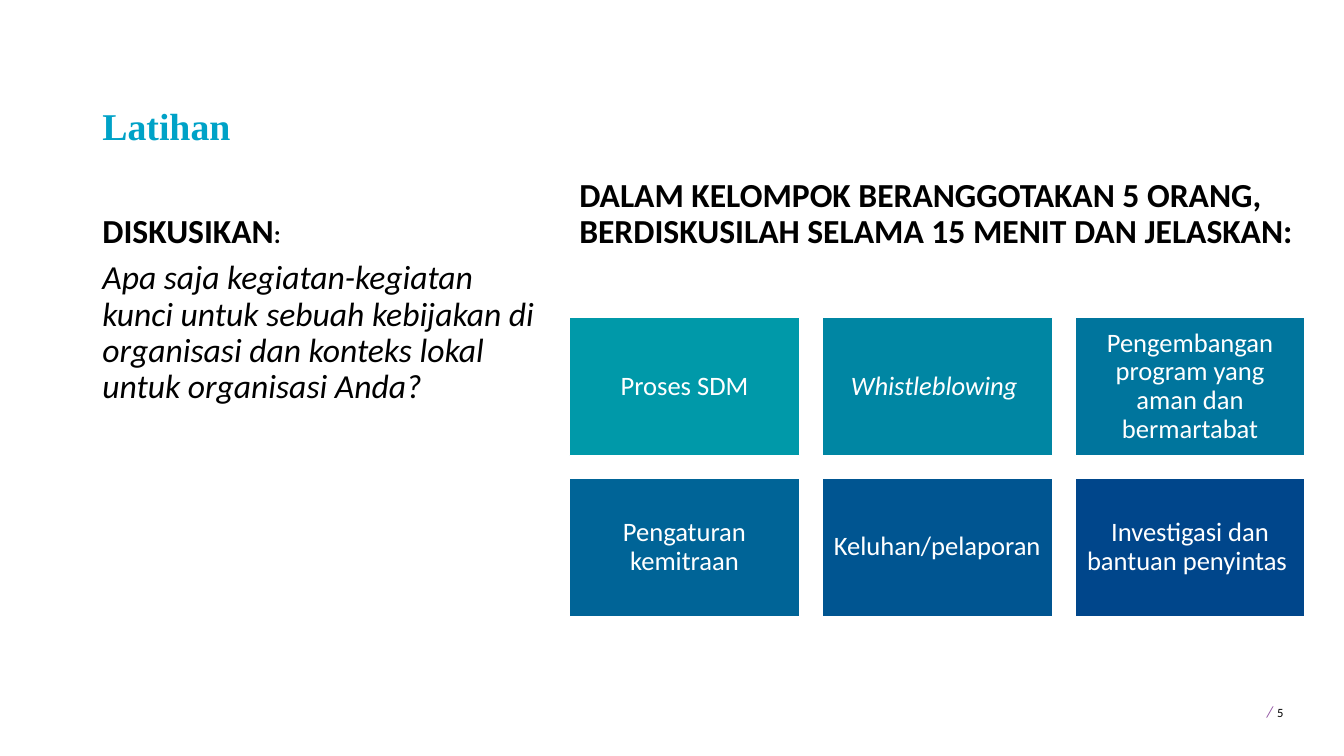
from pptx import Presentation
from pptx.dml.color import RGBColor
from pptx.enum import shapes, text
from pptx.util import Cm, Pt

BLACK = RGBColor(0x00, 0x00, 0x00)
WHITE = RGBColor(0xFF, 0xFF, 0xFF)
CYAN = RGBColor(0x00, 0xA2, 0xC7)
PURPLE = RGBColor(0x90, 0x53, 0xA1)
TILES = [
    ("Proses SDM", RGBColor(0x00, 0x99, 0xA9)),
    ("Whistleblowing ", RGBColor(0x00, 0x86, 0xA3)),
    ("Pengembangan program yang aman dan bermartabat", RGBColor(0x00, 0x75, 0x9D)),
    ("Pengaturan kemitraan", RGBColor(0x00, 0x64, 0x97)),
    ("Keluhan/pelaporan", RGBColor(0x00, 0x55, 0x91)),
    ("Investigasi dan bantuan penyintas\u00a0", RGBColor(0x00, 0x46, 0x8B)),
]

deck = Presentation()
deck.slide_width, deck.slide_height = Cm(33.87), Cm(19.05)
slide = deck.slides.add_slide(deck.slide_layouts[6])


def write(para, words, size=24, color=BLACK, face="Calibri", bold=False, slant=False):
    run = para.add_run()
    run.text = words
    font = run.font
    font.name, font.size, font.bold, font.italic = face, Pt(size), bold, slant
    font.color.rgb = color


def add_box(left, top, width, height, anchor=text.MSO_ANCHOR.BOTTOM, lead=0.9):
    box = slide.shapes.add_textbox(Cm(left), Cm(top), Cm(width), Cm(height))
    frame = box.text_frame
    frame.word_wrap = True
    frame.vertical_anchor = anchor
    para = frame.paragraphs[0]
    para.line_spacing = lead
    return para


title = add_box(2.33, 1.01, 29.21, 2.87)
write(title, "Latihan", size=27, color=CYAN, face="Times New Roman", bold=True)

head = add_box(2.33, 4.15, 11.07, 2.29)
write(head, "DISKUSIKAN", bold=True)
write(head, ":", size=18, bold=True)

body = add_box(2.33, 6.45, 11.4, 10.85, anchor=text.MSO_ANCHOR.TOP)
write(body, "Apa saja kegiatan-kegiatan kunci untuk sebuah kebijakan di "
      "organisasi dan konteks lokal untuk organisasi Anda?", slant=True)

task = add_box(14.35, 4.15, 18.55, 2.29)
write(task, "DALAM KELOMPOK BERANGGOTAKAN 5 ORANG, "
      "BERDISKUSILAH SELAMA 15 MENIT DAN JELASKAN:", bold=True)

for i, (label, fill) in enumerate(TILES):
    row, col = divmod(i, 3)
    tile = slide.shapes.add_shape(
        shapes.MSO_SHAPE.RECTANGLE,
        Cm(14.35 + 6.37 * col), Cm(8 + 4.05 * row), Cm(5.8), Cm(3.48))
    tile.shadow.inherit = False
    tile.fill.solid()
    tile.fill.fore_color.rgb = fill
    tile.line.color.rgb = WHITE
    tile.line.width = Pt(1)
    frame = tile.text_frame
    frame.word_wrap = True
    frame.vertical_anchor = text.MSO_ANCHOR.MIDDLE
    frame.margin_left = frame.margin_right = Cm(0.2)
    frame.margin_top = frame.margin_bottom = Cm(0.2)
    para = frame.paragraphs[0]
    para.alignment = text.PP_ALIGN.CENTER
    para.line_spacing = 0.9
    write(para, label, size=19, color=WHITE, slant=label.startswith("Whistle"))

page = add_box(31.57, 17.48, 2.21, 1.02, anchor=text.MSO_ANCHOR.TOP, lead=1.0)
write(page, " ", size=13.5)
write(page, "/", size=11.2, color=PURPLE, slant=True)
write(page, " ", size=13.5)
write(page, "5", size=9)

deck.save("out.pptx")
